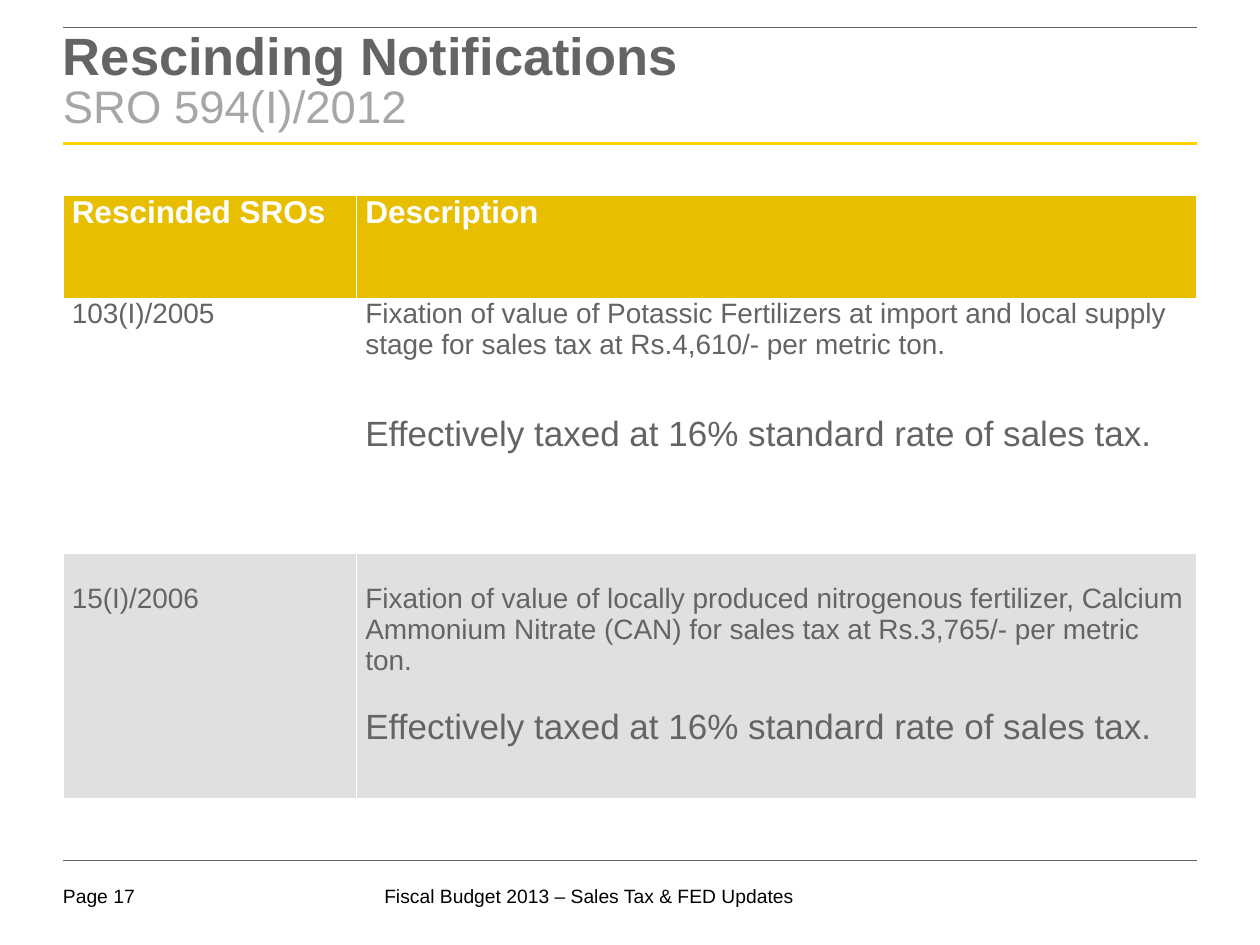
from lxml.etree import SubElement
from pptx import Presentation
from pptx.dml.color import RGBColor
from pptx.enum.shapes import MSO_CONNECTOR
from pptx.oxml.ns import qn
from pptx.util import Inches, Pt

COLORS = {
    "white": "FFFFFF", "black": "000000", "gray": "646464", "light": "A6A6A6",
    "yellow": "FFD200", "gold": "E7BE00", "band": "E0E0E0",
}


def set_font(font, size, color, bold=False):
    font.name = "Arial"
    font.size = Pt(size)
    font.bold = bold
    font.color.rgb = RGBColor.from_string(COLORS[color])


def add_text_frame(slide, left, top, width, height, top_inset=0):
    frame = slide.shapes.add_textbox(
        Inches(left), Inches(top), Inches(width), Inches(height)).text_frame
    frame.margin_left = frame.margin_right = frame.margin_bottom = 0
    frame.margin_top = Inches(top_inset)
    frame.word_wrap = True
    return frame


prs = Presentation()
prs.slide_width, prs.slide_height = Inches(10), Inches(7.5)
slide = prs.slides.add_slide(prs.slide_layouts[6])

for text, left, width in [("Fiscal Budget 2013 – Sales Tax & FED Updates", 3.05, 3.7),
                          ("Page 17", 0.5, 0.73)]:
    footer = add_text_frame(slide, left, 7.02, width, 0.22).paragraphs[0]
    footer.text = text
    set_font(footer.font, 11, "black")

for y, color, weight in [(1.14, "yellow", 1.5), (6.83, "gray", 0.25), (0.22, "gray", 0.5)]:
    rule = slide.shapes.add_connector(
        MSO_CONNECTOR.STRAIGHT, Inches(0.5), Inches(y), Inches(9.5), Inches(y))
    rule.line.color.rgb = RGBColor.from_string(COLORS[color])
    rule.line.width = Pt(weight)
    SubElement(rule._element.spPr, qn("a:effectLst"))

title = add_text_frame(slide, 0.5, 0.22, 9, 0.94, 0.04).paragraphs[0]
title.line_spacing = 0.85
heading = title.add_run()
heading.text = "Rescinding Notifications"
set_font(heading.font, 30, "gray", True)
title.add_line_break()
subheading = title.add_run()
subheading.text = "SRO 594(I)/2012"
set_font(subheading.font, 26, "light")

TAX_NOTE = "Effectively taxed at 16% standard rate of sales tax."
rows = [
    (0.82, "gold", 0, 0, [["Rescinded SROs"], ["Description"]]),
    (2.02, "white", 0, 31, [["103(I)/2005"], [
        "Fixation of value of Potassic Fertilizers at import and local supply "
        "stage for sales tax at Rs.4,610/- per metric ton.", TAX_NOTE]]),
    (1.95, "band", 0.24, 18, [["15(I)/2006"], [
        "Fixation of value of locally produced nitrogenous fertilizer, Calcium "
        "Ammonium Nitrate (CAN) for sales tax at Rs.3,765/- per metric ton.", TAX_NOTE]]),
]
sros = slide.shapes.add_table(
    len(rows), 2, Inches(0.5), Inches(1.55), Inches(9), Inches(4.79)).table
for column, width in zip(sros.columns, (2.33, 6.67)):
    column.width = Inches(width)

for r, (height, fill, top_inset, note_gap, contents) in enumerate(rows):
    sros.rows[r].height = Inches(height)
    for c, texts in enumerate(contents):
        cell = sros.cell(r, c)
        cell.margin_left = cell.margin_right = Inches(0.07)
        cell.margin_top, cell.margin_bottom = Inches(top_inset), 0
        for side in ("L", "R", "T", "B"):
            border = SubElement(cell._tc.get_or_add_tcPr(), qn(f"a:ln{side}"), w=str(Pt(1)))
            paint = SubElement(border, qn("a:solidFill"))
            SubElement(paint, qn("a:srgbClr"), val=COLORS["white"])
        cell.fill.solid()
        cell.fill.fore_color.rgb = RGBColor.from_string(COLORS[fill])
        cell.text_frame.text = "\n".join(texts)
        for i, paragraph in enumerate(cell.text_frame.paragraphs):
            if r == 0:
                set_font(paragraph.font, 18, "white", True)
            else:
                set_font(paragraph.font, 20 if i else 16, "gray")
            if i:
                paragraph.space_before = Pt(note_gap)

prs.save("out.pptx")
